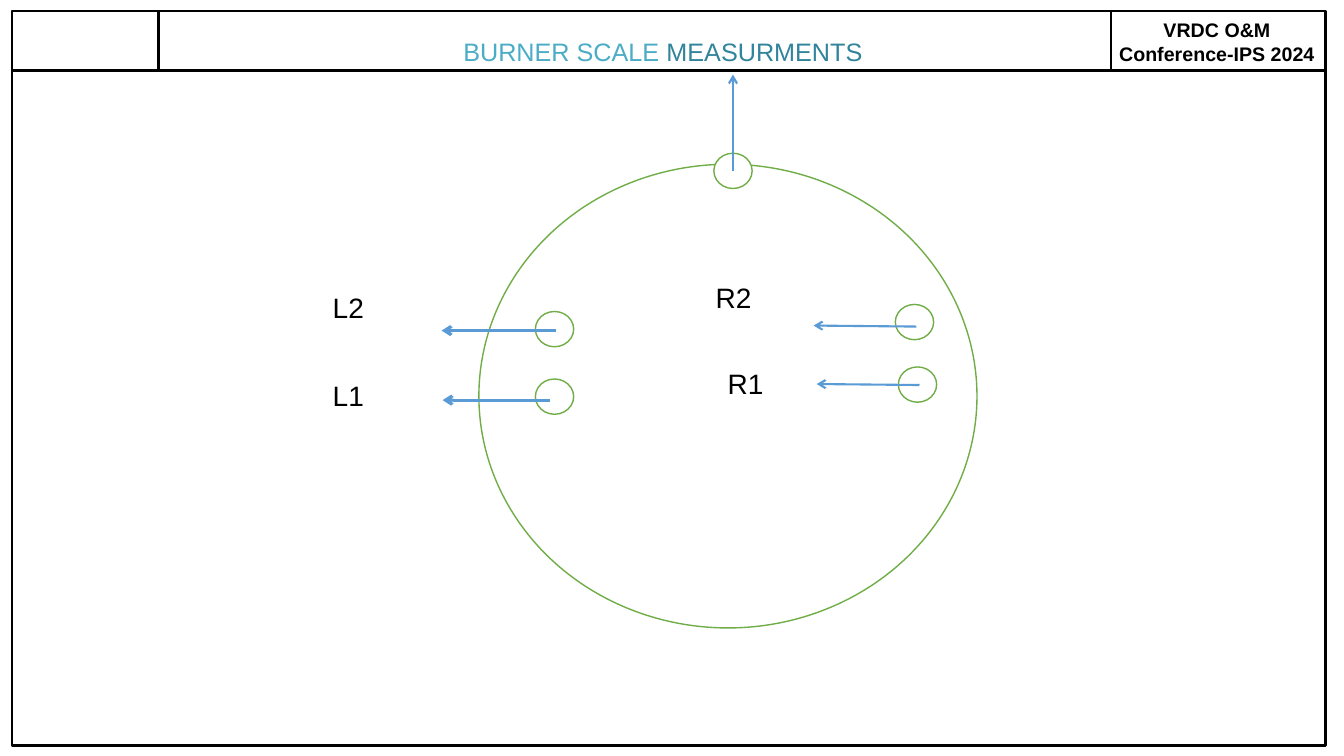
from dataclasses import dataclass

from lxml.etree import SubElement
from pptx import Presentation
from pptx.dml.color import RGBColor
from pptx.enum.shapes import MSO_CONNECTOR, MSO_SHAPE
from pptx.enum.text import PP_ALIGN
from pptx.oxml.ns import qn
from pptx.util import Pt

SCALE = 9144


@dataclass(frozen=True)
class Theme:
    font: str = "Arial"
    ink: str = "000000"
    paper: str = "FFFFFF"
    green: str = "70AD47"
    blue: str = "5B9BD5"
    aqua: str = "4BACC6"
    teal: str = "31849B"
    head: int = 14
    title: int = 18
    label: int = 20


def px(*sizes):
    return [size * SCALE for size in sizes]


def write(par, text, size, color, font, bold=False):
    run = par.add_run()
    run.text = text
    run.font.name = font
    run.font.size = Pt(size)
    run.font.bold = bold
    run.font.color.rgb = RGBColor.from_string(color)


class Board:
    def __init__(self, slide, theme):
        self.slide = slide
        self.theme = theme

    def shape(self, kind, box, color, width, fill=None):
        item = self.slide.shapes.add_shape(kind, *px(*box))
        item.shadow.inherit = False
        if fill:
            item.fill.solid()
            item.fill.fore_color.rgb = RGBColor.from_string(fill)
        else:
            item.fill.background()
        item.line.color.rgb = RGBColor.from_string(color)
        item.line.width = Pt(width)

    def circle(self, *box):
        self.shape(MSO_SHAPE.OVAL, box, self.theme.green, 1, self.theme.paper)

    def line(self, ends, color, width, arrow=False):
        item = self.slide.shapes.add_connector(MSO_CONNECTOR.STRAIGHT, *px(*ends))
        item.line.color.rgb = RGBColor.from_string(color)
        item.line.width = Pt(width)
        props = item._element.spPr
        if arrow:
            SubElement(props.find(qn("a:ln")), qn("a:tailEnd"), type="arrow")
        SubElement(props, qn("a:effectLst"))

    def text(self, box, lines, size, bold=False, wrap=True, lead=None, after=None):
        frame = self.slide.shapes.add_textbox(*px(*box)).text_frame
        frame.word_wrap = wrap
        for i, runs in enumerate(lines):
            par = frame.add_paragraph() if i else frame.paragraphs[0]
            par.alignment = PP_ALIGN.CENTER
            par.line_spacing = lead
            par.space_after = after
            for words, color in runs:
                write(par, words, size, color, self.theme.font, bold=bold)


def main():
    deck = Presentation()
    deck.slide_width, deck.slide_height = px(1333, 750)
    theme = Theme()
    board = Board(deck.slides.add_slide(deck.slide_layouts[6]), theme)

    left, top, right, base = 12, 11, 1315, 70
    board.shape(MSO_SHAPE.RECTANGLE, (left, top, right - left, 729), theme.ink, 2)
    board.line((left, base, right, base), theme.ink, 2)
    for x in (157, 1102):
        board.line((x, top, x, base), theme.ink, 2)
    event = [[("VRDC O&M", theme.ink)], [("Conference-IPS 2024", theme.ink)]]
    board.text((1095, 13, 224, 57), event, theme.head, bold=True, wrap=False)

    board.circle(475, 163, 494, 460)
    for x, y in ((531, 309), (531, 376), (708, 152), (888, 302), (891, 364)):
        board.circle(x, y, 38, 35)

    arrows = (
        ((551, 328, 438, 328), 2.25),
        ((546, 397, 439, 397), 2.25),
        ((909, 324, 807, 323), 1.5),
        ((912, 382, 810, 381), 1.5),
        ((727, 170, 727, 74), 1.5),
    )
    for ends, width in arrows:
        board.line(ends, theme.blue, width, arrow=True)

    labels = (("L2", 317, 283), ("L1", 317, 371), ("R2", 699, 273), ("R1", 711, 359))
    for name, x, y in labels:
        board.text((x, y, 57, 46), [[(name, theme.ink)]], theme.label)

    title = [[("BURNER SCALE ", theme.aqua), ("MEASURMENTS", theme.teal)]]
    board.text((249, 27, 817, 43), title, theme.title, lead=1.15, after=Pt(10))

    deck.save("out.pptx")


if __name__ == "__main__":
    main()
